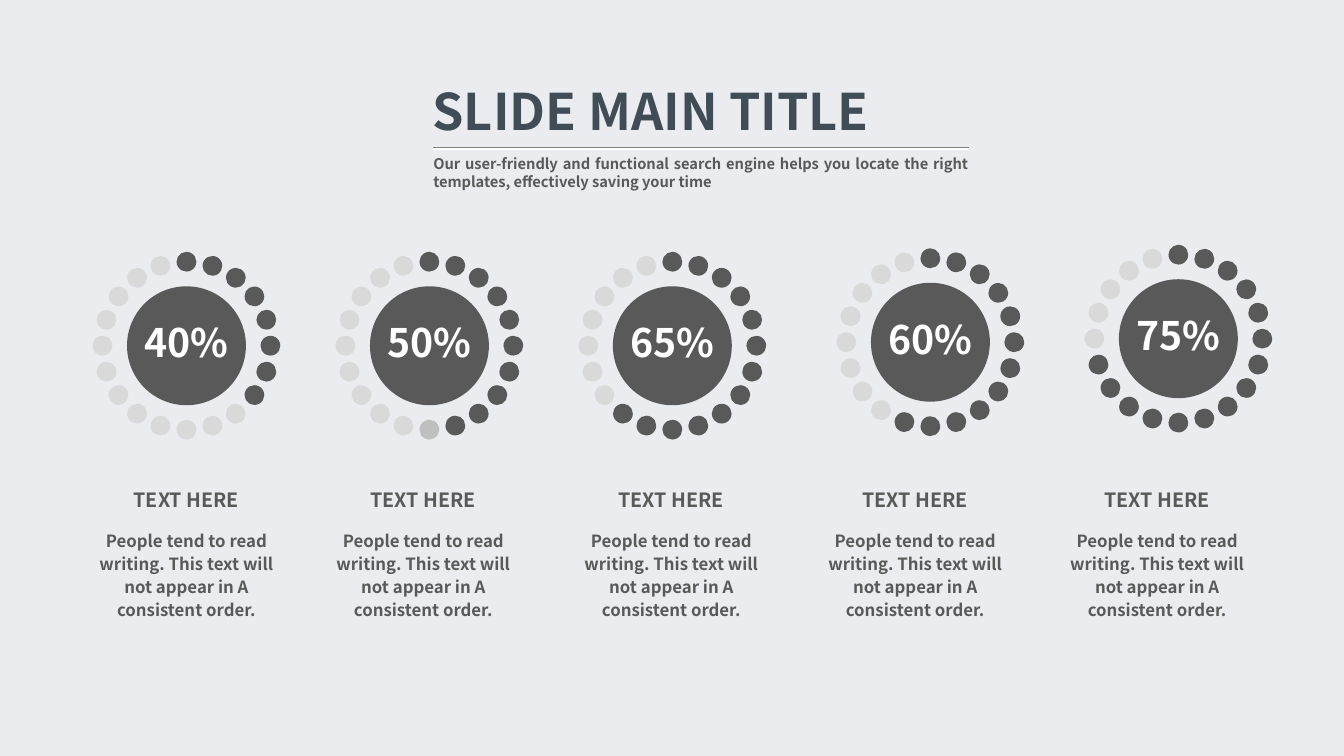
from math import cos, radians, sin

from lxml import etree
from pptx import Presentation
from pptx import util as u
from pptx.dml.color import RGBColor
from pptx.enum import shapes, text
from pptx.oxml import ns

CELL = u.Inches(0.1)  # the slide is a grid of 133.33 columns by 75 rows
COLUMNS, ROWS = 133.33, 75
FONT = "Noto Sans CJK SC"
DARK, PALE, HALFWAY, WHITE = "595959", "D9D9D9", "BFBFBF", "FFFFFF"
DOTS, DOT_SIZE, RING_RADIUS, DISC_SIZE = 20, 1.96, 8.33, 11.8

HEADING = "TEXT HERE"
DESCRIPTION = ("People tend to read writing. This text will not appear in A "
               "consistent order.")
# percent, ring centre column, ring centre row, caption centre column
GAUGES = [
    (40, 18.5, 34.3, 18.5),
    (50, 42.6, 34.3, 42),
    (65, 66.7, 34.3, 66.6),
    (60, 92.3, 33.95, 90.8),
    (75, 116.9, 33.6, 114.8),
]


def cells(*counts):
    return [round(count * CELL) for count in counts]


def paint(color_format, color):
    color_format.rgb = RGBColor.from_string(color)


def write(holder, words, size, color, align, wrap=True, spacing=None):
    """Fill a text box or placeholder with one bold paragraph."""
    frame = holder.text_frame
    frame.text = words
    frame.word_wrap = wrap
    frame.auto_size = text.MSO_AUTO_SIZE.SHAPE_TO_FIT_TEXT
    frame.vertical_anchor = text.MSO_ANCHOR.TOP
    paragraph = frame.paragraphs[0]
    paragraph.alignment = align
    if spacing:
        paragraph.line_spacing = spacing
    font = paragraph.font
    font.name, font.size, font.bold = FONT, u.Pt(size), True
    paint(font.color, color)


def centered_text(slide, words, center, top, width, height, size, color, **options):
    box = slide.shapes.add_textbox(*cells(center - width / 2, top, width, height))
    write(box, words, size, color, text.PP_ALIGN.CENTER, **options)


def circle(slide, center_x, center_y, diameter, color):
    disc = slide.shapes.add_shape(
        shapes.MSO_SHAPE.OVAL,
        *cells(center_x - diameter / 2, center_y - diameter / 2, diameter, diameter))
    disc.shadow.inherit = False
    disc.fill.solid()
    paint(disc.fill.fore_color, color)
    disc.line.fill.background()


def rule(slide, left, right, row, color):
    line = slide.shapes.add_connector(
        shapes.MSO_CONNECTOR.STRAIGHT, *cells(left, row, right, row))
    line.line.width = u.Pt(1)
    paint(line.line.color, color)
    etree.SubElement(line._element.spPr, ns.qn("a:effectLst"))


def gauge(slide, percent, x, y):
    """Draw a disc ringed by dots, lit clockwise from the top."""
    circle(slide, x, y, DISC_SIZE, DARK)
    lit = DOTS * percent // 100
    for dot in range(DOTS):
        angle = radians(360 / DOTS * dot)
        color = DARK if dot < lit else PALE
        if percent == 50 and dot == lit:
            color = HALFWAY
        circle(slide, x + RING_RADIUS * sin(angle), y - RING_RADIUS * cos(angle),
               DOT_SIZE, color)
    centered_text(slide, f"{percent}%", x, y - 3.2, 10.5, 5.7, 28, WHITE, wrap=False)


def caption(slide, center):
    centered_text(slide, HEADING, center, 47.9, 12.8, 3.4, 14, DARK, wrap=False)
    centered_text(slide, DESCRIPTION, center, 51.9, 19.7, 10.2, 12, DARK, spacing=1.14)


def header(slide):
    title = slide.shapes.title
    title.left, title.top, title.width, title.height = cells(41.9, 7.4, 55.3, 7.1)
    write(title, "SLIDE MAIN TITLE", 36, "404C56", text.PP_ALIGN.JUSTIFY)
    subtitle = slide.shapes.add_textbox(*cells(42, 14.9, 55.1, 4.7))
    write(subtitle, "Our user-friendly and functional search engine helps you locate "
          "the right templates, effectively saving your time",
          10.5, DARK, text.PP_ALIGN.JUSTIFY)
    rule(slide, 43, 96.1, 14.7, "808080")
    rule(slide, 43, 96.1, 14.8, WHITE)


def main():
    deck = Presentation()
    deck.slide_width, deck.slide_height = cells(COLUMNS, ROWS)
    slide = deck.slides.add_slide(deck.slide_layouts.get_by_name("Title Only"))
    slide.background.fill.solid()
    paint(slide.background.fill.fore_color, "EAECF0")
    header(slide)
    for percent, ring_x, ring_y, caption_x in GAUGES:
        gauge(slide, percent, ring_x, ring_y)
        caption(slide, caption_x)
    deck.save("out.pptx")


if __name__ == "__main__":
    main()
